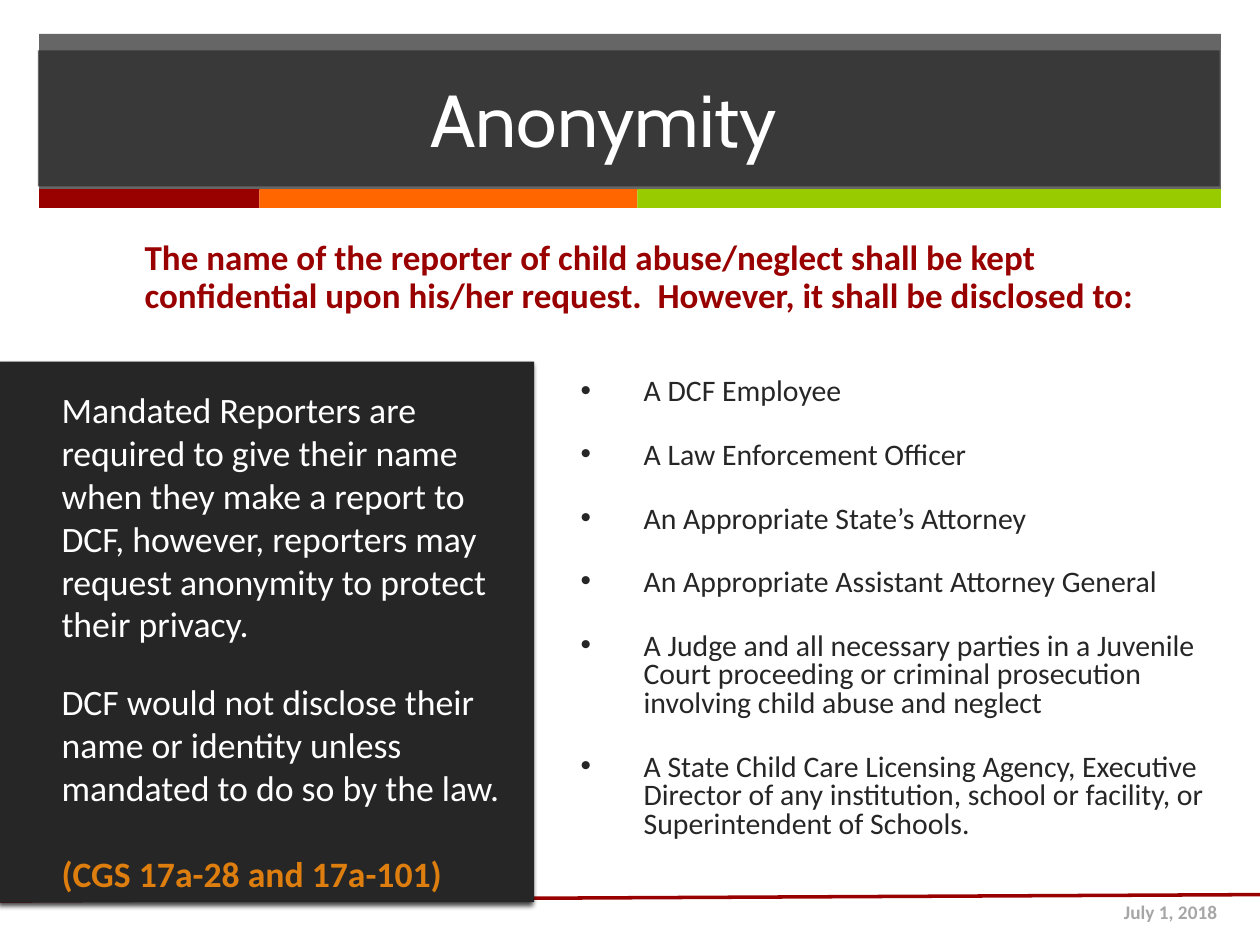
from lxml.etree import SubElement
from pptx import Presentation
from pptx.dml.color import RGBColor
from pptx.enum.shapes import MSO_CONNECTOR, MSO_SHAPE
from pptx.enum.text import MSO_ANCHOR, PP_ALIGN
from pptx.oxml.ns import qn
from pptx.util import Inches, Pt

# Content
TITLE = "Anonymity"
INTRO = ("The name of the reporter of child abuse/neglect shall be kept confidential "
         "upon his/her request.  However, it shall be disclosed to:")
REPORTERS = [
    "Mandated Reporters are required to give their name when they make a report to DCF, "
    "however, reporters may request anonymity to protect their privacy.",
    "DCF would not disclose their name or identity unless mandated to do so by the law.",
]
CITATION = "(CGS 17a-28 and 17a-101)"
DISCLOSED_TO = [
    "A DCF Employee",
    "A Law Enforcement Officer",
    "An Appropriate State’s Attorney",
    "An Appropriate Assistant Attorney General",
    "A Judge and all necessary parties in a Juvenile Court proceeding or criminal "
    "prosecution involving child abuse and neglect",
    "A State Child Care Licensing Agency, Executive Director of any institution, "
    "school or facility, or Superintendent of Schools.",
]
DATE = "July 1, 2018"

THEME = {
    "dark": "262626", "white": "FFFFFF", "red": "990000", "orange": "FF6600",
    "green": "99CC00", "citation": "DD7E0E", "grey": "A6A6A6",
    "heading": "Cabin", "body": "Calibri",
    "title_size": 42, "panel_size": 20.4, "intro_size": 20, "list_size": 17, "date_size": 11,
}
STRIPES = [("red", 1.75), ("orange", 3), ("green", 4.63)]


def color(name):
    return RGBColor.from_string(THEME[name])


def add_child(parent, tag, **attributes):
    return SubElement(parent, qn(tag), attributes)


def fill_solid(shape, name, alpha=None):
    shape.fill.solid()
    shape.fill.fore_color.rgb = color(name)
    if alpha:
        fill_color = shape._element.spPr.find(".//" + qn("a:srgbClr"))
        add_child(fill_color, "a:alpha", val=str(alpha * 1000))


def add_block(slide, box, name, alpha=None):
    block = slide.shapes.add_shape(MSO_SHAPE.RECTANGLE, *map(Inches, box))
    block.shadow.inherit = False
    block.line.fill.background()
    fill_solid(block, name, alpha)
    return block


def add_text_box(slide, box, anchor=MSO_ANCHOR.TOP):
    frame = slide.shapes.add_textbox(*map(Inches, box)).text_frame
    frame.word_wrap = True
    frame.vertical_anchor = anchor
    return frame


def write(frame, text, size, ink, font="body", bold=False, align=PP_ALIGN.LEFT,
          before=0, spacing=None, bullet=False):
    paragraph = frame.paragraphs[0] if not frame.text else frame.add_paragraph()
    paragraph.alignment = align
    paragraph.space_before = Pt(before)
    if spacing:
        paragraph.line_spacing = spacing
    if bullet:
        properties = paragraph._p.get_or_add_pPr()
        properties.set("marL", str(Inches(0.5)))
        properties.set("indent", str(Inches(-0.5)))
        add_child(properties, "a:buFont", typeface="Arial")
        add_child(properties, "a:buChar", char="•")
    run = paragraph.add_run()
    run.text = text
    run.font.name = THEME[font]
    run.font.size = Pt(THEME[size])
    run.font.bold = bold
    run.font.color.rgb = color(ink)


def main():
    deck = Presentation()
    deck.slide_width, deck.slide_height = Inches(10), Inches(7.5)
    slide = deck.slides.add_slide(deck.slide_layouts[5])

    # Header band and stripes
    add_block(slide, (0.31, 0.27, 9.38, 1.24), "dark", alpha=70)
    left = 0.31
    for name, width in STRIPES:
        add_block(slide, (left, 1.5, width, 0.15), name)
        left += width

    # Date and footer rule
    date = add_text_box(slide, (7.43, 7.04, 2.33, 0.4), MSO_ANCHOR.MIDDLE)
    write(date, DATE, "date_size", "grey", bold=True, align=PP_ALIGN.RIGHT)
    rule = slide.shapes.add_connector(
        MSO_CONNECTOR.STRAIGHT, Inches(0), Inches(7.15), Inches(10), Inches(7.1))
    rule.line.color.rgb = color("red")
    rule.line.width = Pt(2)
    add_child(rule._element.spPr, "a:effectLst")

    # Dark panel with its soft shadow
    panel = add_block(slide, (0, 2.87, 4.24, 4.29), "dark")
    effects = panel._element.spPr.find(qn("a:effectLst"))
    shadow = add_child(effects, "a:outerShdw", blurRad=str(Pt(3)), dist=str(Pt(2)),
                       dir=str(110 * 60000), rotWithShape="0")
    add_child(add_child(shadow, "a:srgbClr", val="000000"), "a:alpha", val="75000")

    # Title, raised above the band; the wide right inset shifts it left
    title = slide.shapes.title
    slide.shapes._spTree.append(title._element)
    title.left, title.top, title.width, title.height = map(Inches, (0.3, 0.4, 9.38, 1.08))
    fill_solid(title, "dark", alpha=70)
    title.text_frame.vertical_anchor = MSO_ANCHOR.MIDDLE
    title.text_frame.margin_right = Inches(0.5)
    write(title.text_frame, TITLE, "title_size", "white", font="heading",
          align=PP_ALIGN.CENTER)

    # Panel text; a narrow right inset keeps the lines full
    reporters = add_text_box(slide, (0.39, 3.03, 3.67, 4.05))
    reporters.margin_right = Inches(0.02)
    for text in REPORTERS:
        write(reporters, text, "panel_size", "white", before=20)
    write(reporters, CITATION, "panel_size", "citation", bold=True, before=24.5)

    # Those the name is disclosed to
    recipients = add_text_box(slide, (4.51, 2.96, 5.17, 4.16))
    for text in DISCLOSED_TO:
        write(recipients, text, "list_size", "dark", before=20, spacing=0.8, bullet=True)

    # Introduction
    intro = add_text_box(slide, (1.05, 1.86, 8.33, 0.98))
    write(intro, INTRO, "intro_size", "red", bold=True, spacing=0.9)

    deck.save("out.pptx")


if __name__ == "__main__":
    main()
